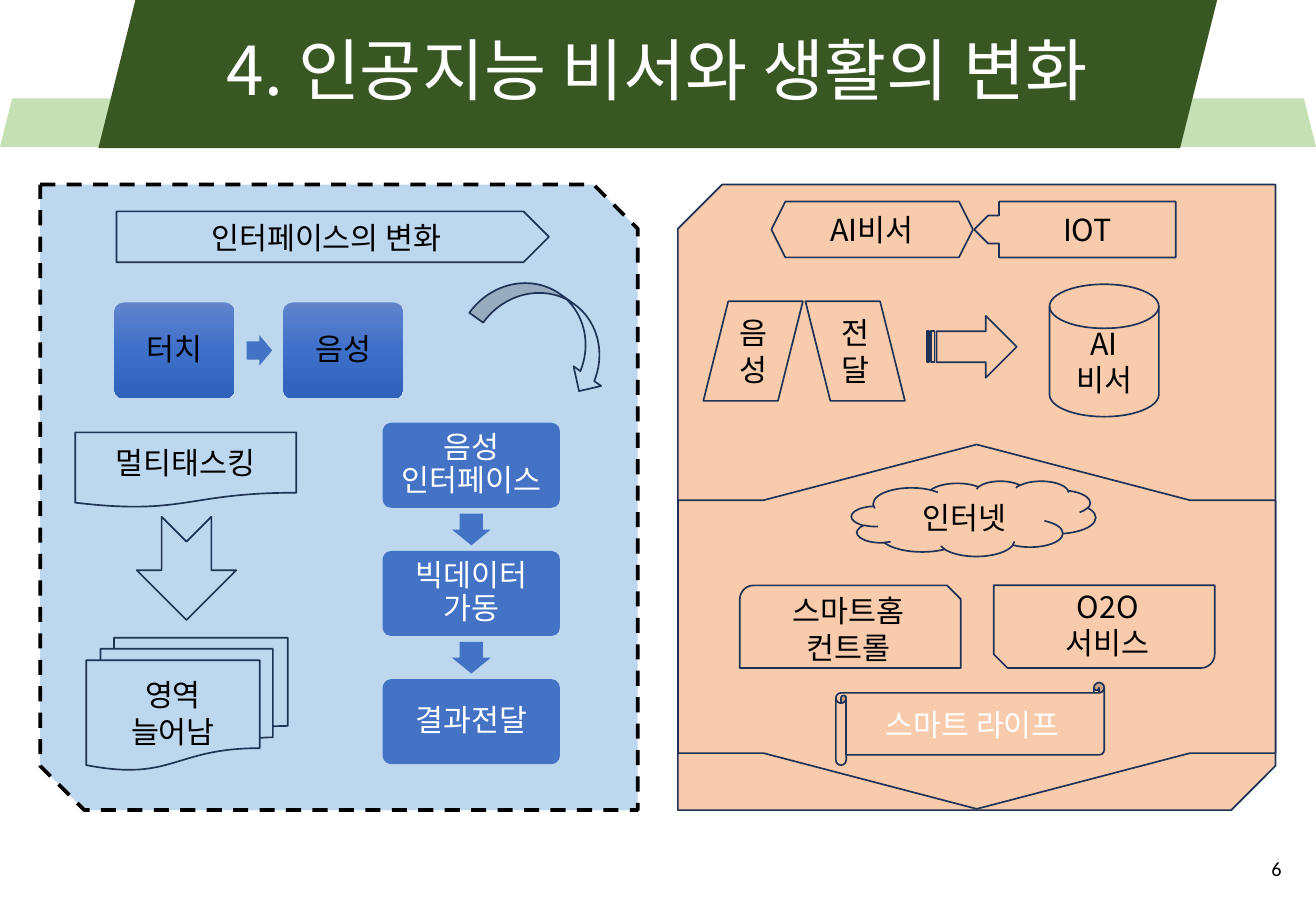
from copy import deepcopy
from dataclasses import dataclass

from lxml.etree import SubElement
from pptx import Presentation
from pptx.dml.color import RGBColor
from pptx.enum.dml import MSO_LINE
from pptx.enum.shapes import MSO_SHAPE as Shape
from pptx.enum.text import MSO_ANCHOR as Anchor, PP_ALIGN as Align
from pptx.oxml.ns import qn
from pptx.util import Pt


@dataclass(frozen=True)
class Theme:
    font: str = "Noto Sans CJK KR"
    number_font: str = "Calibri"
    title_size: int = 40
    body_size: int = 18
    number_size: int = 12
    white: str = "FFFFFF"
    black: str = "000000"
    band: str = "C5E0B4"
    banner: str = "385723"
    blue: str = "BDD7EE"
    peach: str = "F8CBAD"
    outline: str = "1E3256"
    accent: str = "4472C4"
    gradient: tuple = ((0, "6183CB"), (0.5, "3E70CA"), (1, "3062BB"))


T = Theme()
TITLE = "4. 인공지능 비서와 생활의 변화"
PAGE = "6"
SLIDE_W, SLIDE_H = 780, 540
BANNER_H = 87.8
PANEL_TOP, PANEL_W, PANEL_H = 109.4, 354.2, 370.8
LEFT_X, RIGHT_X = 23.8, 401.8
PANEL_ADJ = (0, 0.074)

RIGHT_PARTS = [
    (Shape.HEXAGON, (457.2, 119.5, 119.5, 33.1), "AI비서", {}),
    (Shape.LEFT_ARROW_CALLOUT, (577.4, 119.5, 119.5, 33.1), "IOT",
     {"adj": (0.5, 0.25, 0.25, 0.876)}),
    (Shape.PARALLELOGRAM, (416.9, 178.6, 59, 59), "음성", {}),
    (Shape.STRIPED_RIGHT_ARROW, (549.4, 187.2, 53.3, 36.7), "", {}),
    (Shape.FLOWCHART_MAGNETIC_DISK, (622.1, 168.5, 64.8, 78.5), "AI\n비서", {}),
    (Shape.LEFT_RIGHT_ARROW_CALLOUT, (470.9, 194.4, 216, PANEL_W), "",
     {"adj": (1.169, 0.585, 0.153, 0.703), "rot": 90}),
    (Shape.CLOUD, (504.7, 285.1, 144.7, 44.6), "인터넷", {}),
    (Shape.SNIP_ROUND_RECTANGLE, (438.5, 347, 131, 49), "스마트홈\n컨트롤", {}),
    (Shape.HORIZONTAL_SCROLL, (495.4, 404.6, 159.1, 49), "스마트 라이프",
     {"color": T.white}),
    (Shape.PARALLELOGRAM, (477.4, 178.6, 59, 59), "전달", {"flip": "H"}),
    (Shape.SNIP_ROUND_RECTANGLE, (589, 347, 131, 49), "", {"flip": "HV"}),
]
O2O_TEXT, O2O_BOX = "O2O 서비스", (614.9, 344.9, 83.5, 51.1)

LEFT_PARTS = [
    (Shape.PENTAGON, (69.1, 125.3, 256.3, 30.2), "인터페이스의 변화", {}),
    (Shape.FLOWCHART_DOCUMENT, (44.6, 256.3, 131, 44.6), "멀티태스킹", {}),
    (Shape.NOTCHED_RIGHT_ARROW, (79.9, 307.4, 61.2, 59), "", {"rot": 90}),
    (Shape.FLOWCHART_MULTIDOCUMENT, (51.1, 378, 119.5, 78.5), "영역\n늘어남", {}),
    (Shape.CURVED_DOWN_ARROW, (281.5, 175, 90, 40.3), "", {"rot": 35.5}),
]
INPUTS = ["터치", "음성"]
INPUT_BOX, INPUT_PITCH = (67.7, 179.3, 71.3, 56.9), 100.1
INPUT_ARROW = (146.2, 198.7, 15.1, 18)
STEPS = ["음성\v인터페이스", "빅데이터\v가동", "결과전달"]
STEP_BOX, STEP_PITCH = (226.8, 250.6, 105.1, 50.4), 76
STEP_ARROW = (270, 302.4, 18.7, 23)
ROUND_ADJ, ARROW_ADJ = (0.1,), (0.6, 0.5)


def rgb(value):
    return RGBColor.from_string(value)


def write(sp, text, color=T.black, size=T.body_size, font=T.font,
          align=Align.CENTER, anchor=Anchor.MIDDLE, spacing=None, inset=None):
    tf = sp.text_frame
    tf.text = text
    tf.word_wrap = True
    tf.vertical_anchor = anchor
    if inset is not None:
        tf.margin_left = tf.margin_right = Pt(inset)
        tf.margin_top = tf.margin_bottom = Pt(inset)
    for p in tf.paragraphs:
        p.alignment = align
        if spacing:
            p.line_spacing = spacing
        p.font.size = Pt(size)
        p.font.color.rgb = rgb(color)
        p.font.name = font
        props = p._p.pPr.find(qn("a:defRPr"))
        SubElement(props, qn("a:ea"), typeface=font)


def add_part(s, kind, box, fill, line=None, adj=(), rot=0, flip=""):
    sp = s.shapes.add_shape(kind, *map(Pt, box))
    sp.shadow.inherit = False
    sp.fill.solid()
    sp.fill.fore_color.rgb = rgb(fill)
    if line:
        sp.line.color.rgb = rgb(line)
        sp.line.width = Pt(1)
    else:
        sp.line.fill.background()
    for i, value in enumerate(adj):
        sp.adjustments[i] = value
    sp.rotation = rot
    for axis in flip:
        sp.element.spPr.find(qn("a:xfrm")).set("flip" + axis, "1")
    return sp


def add_panel(s, x, fill, parts, flip=""):
    panel = add_part(s, Shape.SNIP_2_DIAG_RECTANGLE, (x, PANEL_TOP, PANEL_W, PANEL_H),
                     fill, T.outline, PANEL_ADJ, flip=flip)
    for kind, box, text, options in parts:
        look = dict(options)
        color = look.pop("color", T.black)
        sp = add_part(s, kind, box, fill, T.outline, **look)
        if text:
            write(sp, text, color)
    return panel


def add_text(s, text, box, **look):
    write(s.shapes.add_textbox(*map(Pt, box)), text, **look)


def add_card(s, text, box, color):
    sp = add_part(s, Shape.ROUNDED_RECTANGLE, box, T.accent, adj=ROUND_ADJ)
    write(sp, text, color, spacing=0.9, inset=5)
    return sp


def shade(sp):
    sp.fill.gradient()
    sp.fill.gradient_angle = 270
    stops = sp.element.spPr.find(qn("a:gradFill")).find(qn("a:gsLst"))
    stops.append(deepcopy(stops[-1]))
    for stop, (position, color) in zip(sp.fill.gradient_stops, T.gradient):
        stop.position = position
        stop.color.rgb = rgb(color)


def add_header(s):
    add_part(s, Shape.TRAPEZOID, (0, 58.3, SLIDE_W, 28.8), T.band)
    add_part(s, Shape.PARALLELOGRAM, (58.3, 0, 663.1, BANNER_H), T.banner)
    title = s.shapes.title
    title.left, title.top, title.width, title.height = map(Pt, (53.3, 0, 672.5, BANNER_H))
    write(title, TITLE, T.white, T.title_size, spacing=0.9)
    s.shapes.element.append(title.element)


def add_flows(s):
    x, y, w, h = INPUT_BOX
    for i, text in enumerate(INPUTS):
        shade(add_card(s, text, (x + i * INPUT_PITCH, y, w, h), T.black))
    add_part(s, Shape.RIGHT_ARROW, INPUT_ARROW, T.accent, adj=ARROW_ADJ)
    x, y, w, h = STEP_BOX
    ax, ay, aw, ah = STEP_ARROW
    for i, text in enumerate(STEPS):
        drop = i * STEP_PITCH
        add_card(s, text, (x, y + drop, w, h), T.white)
        if i < len(STEPS) - 1:
            add_part(s, Shape.RIGHT_ARROW, (ax, ay + drop, aw, ah), T.accent,
                     adj=ARROW_ADJ, rot=90)


def main():
    """Build the slide on AI assistants and changes in daily life."""
    prs = Presentation()
    prs.slide_width, prs.slide_height = Pt(SLIDE_W), Pt(SLIDE_H)
    s = prs.slides.add_slide(prs.slide_layouts[5])
    add_header(s)
    add_text(s, PAGE, (591.1, 500.4, 175.7, 28.8), size=T.number_size,
             font=T.number_font, align=Align.RIGHT)
    add_panel(s, RIGHT_X, T.peach, RIGHT_PARTS, flip="H")
    add_text(s, O2O_TEXT, O2O_BOX, anchor=Anchor.TOP)
    panel = add_panel(s, LEFT_X, T.blue, LEFT_PARTS)
    panel.line.color.rgb = rgb(T.black)
    panel.line.width = Pt(2.25)
    panel.line.dash_style = MSO_LINE.DASH
    add_flows(s)
    prs.save("out.pptx")


if __name__ == "__main__":
    main()
